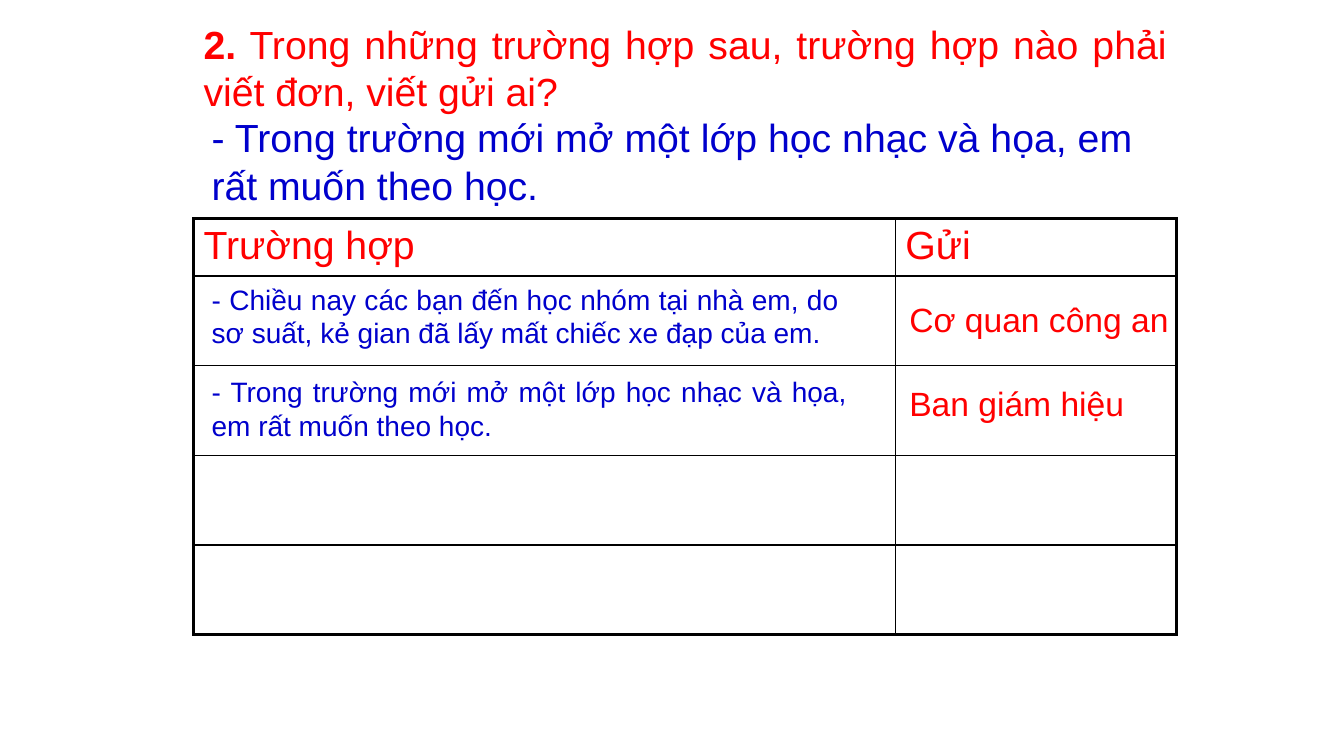
from dataclasses import dataclass

from lxml import etree
from pptx import Presentation
from pptx.dml.color import RGBColor
from pptx.enum.text import MSO_AUTO_SIZE as AutoSize, PP_ALIGN as Align
from pptx.oxml.ns import qn
from pptx.slide import Slide
from pptx.table import _Cell as Cell
from pptx.text.text import _Run as Run
from pptx.util import Inches, Pt

RED = RGBColor(0xFF, 0x00, 0x00)
BLUE = RGBColor(0x00, 0x00, 0xCC)
BLACK = RGBColor(0x00, 0x00, 0x00)

COLUMN_WIDTHS = (6.96, 2.79)
ROW_HEIGHTS = (0.56, 0.89, 0.89, 0.89, 0.89)
HEADERS = ("Trường hợp", "Gửi")
OUTER_BORDER = 2.25
INNER_BORDER = 1


@dataclass(frozen=True)
class TextItem:
    text: str
    left: float
    top: float
    width: float
    height: float
    size: int
    color: RGBColor
    align: Align = Align.LEFT
    bold_lead: str = ""


MUSIC_CLASS = "- Trong trường mới mở một lớp học nhạc và họa, em rất muốn theo học."
STOLEN_BICYCLE = (
    "- Chiều nay các bạn đến học nhóm tại nhà em, do sơ suất, "
    "kẻ gian đã lấy mất chiếc xe đạp của em."
)
QUESTION = TextItem(
    " Trong những trường hợp sau, trường hợp nào phải viết đơn, viết gửi ai?",
    1.92, 0.15, 9.75, 1.03, 28, RED, Align.JUSTIFY, "2.",
)
ANSWERS = (
    TextItem(STOLEN_BICYCLE, 2, 2.75, 6.42, 0.77, 20, BLUE, Align.JUSTIFY),
    TextItem("Cơ quan công an", 8.92, 2.92, 3, 0.5, 24, RED),
    TextItem(MUSIC_CLASS, 2, 1.08, 9.33, 1.03, 28, BLUE, Align.JUSTIFY),
    TextItem(MUSIC_CLASS, 2, 3.67, 6.5, 0.77, 20, BLUE, Align.JUSTIFY),
    TextItem("Ban giám hiệu", 8.92, 3.75, 2.5, 0.5, 24, RED),
)


def format_run(run: Run, size: int, color: RGBColor, bold: bool = False) -> None:
    run.font.name = "Arial"
    run.font.size = Pt(size)
    run.font.color.rgb = color
    run.font.bold = bold


def add_text(slide: Slide, item: TextItem) -> None:
    box = slide.shapes.add_textbox(
        Inches(item.left), Inches(item.top), Inches(item.width), Inches(item.height)
    )
    frame = box.text_frame
    frame.word_wrap = True
    frame.auto_size = AutoSize.SHAPE_TO_FIT_TEXT
    paragraph = frame.paragraphs[0]
    paragraph.alignment = item.align
    if item.bold_lead:
        paragraph.text = item.bold_lead
        format_run(paragraph.runs[0], item.size, item.color, bold=True)
    run = paragraph.add_run()
    run.text = item.text
    format_run(run, item.size, item.color)


def set_border(cell: Cell, side: str, width: float) -> None:
    properties = cell._tc.get_or_add_tcPr()
    line = etree.SubElement(properties, qn(f"a:ln{side}"), w=str(Pt(width)))
    fill = etree.SubElement(line, qn("a:solidFill"))
    etree.SubElement(fill, qn("a:srgbClr"), val=str(BLACK))


def add_case_table(slide: Slide) -> None:
    last_row, last_column = len(ROW_HEIGHTS) - 1, len(COLUMN_WIDTHS) - 1
    table = slide.shapes.add_table(
        len(ROW_HEIGHTS), len(COLUMN_WIDTHS), Inches(1.92), Inches(2.17),
        Inches(sum(COLUMN_WIDTHS)), Inches(sum(ROW_HEIGHTS)),
    ).table
    table.first_row = False
    table.horz_banding = False
    for column, width in zip(table.columns, COLUMN_WIDTHS):
        column.width = Inches(width)
    for row_index, height in enumerate(ROW_HEIGHTS):
        table.rows[row_index].height = Inches(height)
        for column_index in range(len(COLUMN_WIDTHS)):
            cell = table.cell(row_index, column_index)
            outer_sides = {
                "L": column_index == 0,
                "R": column_index == last_column,
                "T": row_index == 0,
                "B": row_index == last_row,
            }
            for side, is_outer in outer_sides.items():
                set_border(cell, side, OUTER_BORDER if is_outer else INNER_BORDER)
            cell.fill.background()
    for column_index, header in enumerate(HEADERS):
        cell = table.cell(0, column_index)
        cell.text_frame.text = header
        format_run(cell.text_frame.paragraphs[0].runs[0], 28, RED)


def main() -> None:
    presentation = Presentation()
    presentation.slide_width = Inches(13.33)
    presentation.slide_height = Inches(7.5)
    slide = presentation.slides.add_slide(presentation.slide_layouts[6])
    add_text(slide, QUESTION)
    add_case_table(slide)
    for answer in ANSWERS:
        add_text(slide, answer)
    presentation.save("out.pptx")


if __name__ == "__main__":
    main()
